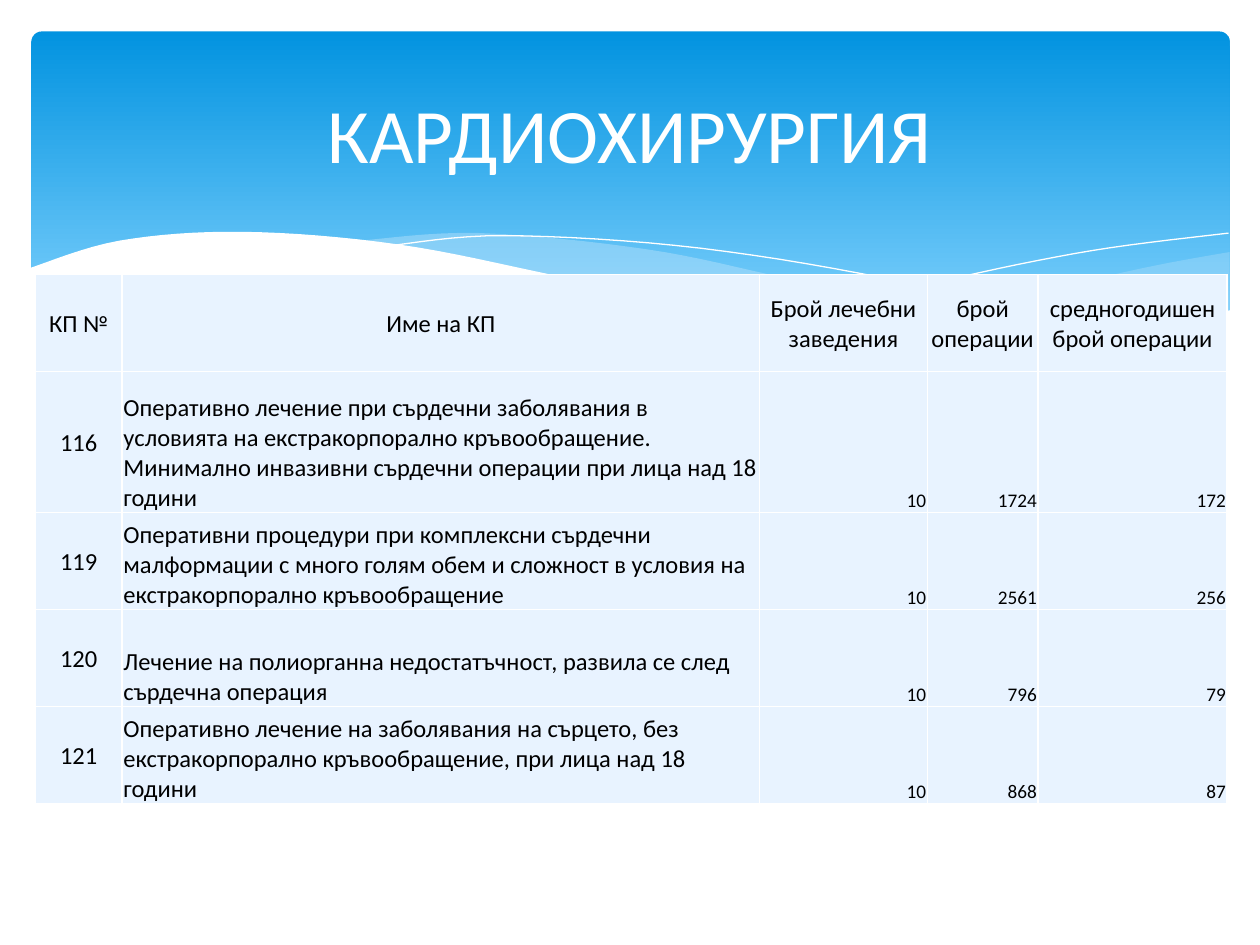
import pptx
import pptx.dml.color
import pptx.enum.shapes
import pptx.enum.text
import pptx.oxml
import pptx.oxml.ns
import pptx.util
from pptx.util import Inches

RGB = pptx.dml.color.RGBColor.from_string
THEME = {
    "font": "Calibri", "title_size": 44, "text_size": 14, "number_size": 11,
    "white": RGB("FFFFFF"), "text": RGB("000000"), "cell": RGB("E8F3FF"),
    "sky_top": RGB("0293E0"), "sky_bottom": RGB("83D3FE"), "wave": RGB("C6E7FC"),
}
ALIGN = pptx.enum.text.PP_ALIGN
ANCHOR = pptx.enum.text.MSO_ANCHOR


def smooth_curve(knots, steps=8):
    """Return Catmull-Rom points in EMU through knots given in inches."""
    ends = [knots[0], *knots, knots[-1]]
    curve = [knots[0]]
    for a, b, c, d in zip(ends, ends[1:], ends[2:], ends[3:]):
        for k in range(1, steps + 1):
            t = k / steps
            curve.append([q + (t * (r - p) + t**2 * (2*p - 5*q + 4*r - u)
                               + t**3 * (3*q - p - 3*r + u)) / 2
                          for p, q, r, u in zip(a, b, c, d)])
    return [(Inches(x), Inches(y)) for x, y in curve]


def add_text(tf, text, size, color, align):
    tf.word_wrap = True
    p = tf.paragraphs[0]
    p.alignment = align
    r = p.add_run()
    r.text = text
    r.font.name = THEME["font"]
    r.font.size = pptx.util.Pt(THEME[size])
    r.font.color.rgb = THEME[color]


prs = pptx.Presentation()
prs.slide_width, prs.slide_height = Inches(10), Inches(7.5)
s = prs.slides.add_slide(prs.slide_layouts[5])

# Sky banner
sky = s.shapes.add_shape(pptx.enum.shapes.MSO_SHAPE.ROUNDED_RECTANGLE,
                         Inches(0.25), Inches(0.25), Inches(9.51), Inches(2.7))
sky.adjustments[0] = 0.03
sky.shadow.inherit = False
sky.line.fill.background()
sky.fill.gradient()
sky.fill.gradient_angle = 270
for stop, color, position in zip(sky.fill.gradient_stops, ("sky_top", "sky_bottom"), (0, 0.9)):
    stop.color.rgb = THEME[color]
    stop.position = position

# Waves: fill opacity in percent (None is an open white line), then the edges in inches
waves = [
    (29, [[(9.76, 2), (9.06, 2.13), (7.79, 2.42), (6.61, 2.65)],
          [(6.61, 2.65), (7.45, 2.75), (8.35, 2.77), (9.13, 2.67), (9.76, 2.47)]]),
    (40, [[(2.86, 1.91), (4.49, 2.22), (6.01, 2.55), (7.22, 2.74), (8.18, 2.78), (8.93, 2.73)],
          [(8.93, 2.73), (7.75, 2.54), (6.29, 2.22), (5.14, 1.98), (3.8, 1.85), (2.86, 1.91)]]),
    (None, [[(3.09, 1.95), (4.01, 1.87), (5.56, 1.97), (7.27, 2.26), (9.07, 2.72)]]),
    (None, [[(6.13, 2.57), (7.48, 2.23), (8.66, 1.99), (9.75, 1.85)]]),
    (100, [[(9.77, 2.46), (8.87, 2.71), (7.78, 2.76), (6.26, 2.58), (4.47, 2.2),
            (3.16, 1.94), (1.93, 1.84), (0.95, 1.91), (0.23, 2.13)],
           [(0.23, 3.29), (9.77, 3.29)]]),
]
for opacity, edges in waves:
    start, *rest = [point for edge in edges for point in smooth_curve(edge)]
    builder = s.shapes.build_freeform(*start)
    builder.add_line_segments(rest, close=opacity is not None)
    sp = builder.convert_to_shape()
    sp.shadow.inherit = False
    if opacity is None:
        sp.fill.background()
        sp.line.color.rgb = THEME["white"]
        sp.line.width = pptx.util.Pt(0)
        continue
    sp.line.fill.background()
    sp.fill.solid()
    sp.fill.fore_color.rgb = THEME["white" if opacity == 100 else "wave"]
    if opacity < 100:
        color = sp.element.spPr.find(pptx.oxml.ns.qn("a:solidFill"))[0]
        color.append(pptx.oxml.parse_xml(
            f'<a:alpha {pptx.oxml.ns.nsdecls("a")} val="{opacity * 1000}"/>'))

# Title, brought in front of the banner
title = s.shapes.title
title.left, title.top, title.width, title.height = (Inches(v) for v in (0.5, 0.37, 9, 1.37))
title.element.getparent().append(title.element)
title.text_frame.auto_size = pptx.enum.text.MSO_AUTO_SIZE.NONE
title.text_frame.vertical_anchor = ANCHOR.MIDDLE
add_text(title.text_frame, "КАРДИОХИРУРГИЯ", "title_size", "white", ALIGN.CENTER)

# Table of clinical pathways
rows = [
    ("КП №", "Име на КП", "Брой лечебни заведения", "брой операции",
     "средногодишен брой операции"),
    ("116", "Оперативно лечение при сърдечни заболявания в условията на екстракорпорално "
     "кръвообращение. Минимално инвазивни сърдечни операции при лица над 18 години",
     "10", "1724", "172"),
    ("119", "Оперативни процедури при комплексни сърдечни малформации с много голям обем и "
     "сложност в условия на екстракорпорално кръвообращение", "10", "2561", "256"),
    ("120", "Лечение на полиорганна недостатъчност, развила се след сърдечна операция",
     "10", "796", "79"),
    ("121", "Оперативно лечение на заболявания на сърцето, без екстракорпорално "
     "кръвообращение, при лица над 18 години", "10", "868", "87"),
]
col_widths = [0.69, 5.06, 1.33, 0.88, 1.5]
row_heights = [0.77, 1.12, 0.77, 0.77, 0.77]
table = s.shapes.add_table(len(rows), len(col_widths), Inches(0.28), Inches(2.18),
                           Inches(sum(col_widths)), Inches(sum(row_heights))).table
for column, width in zip(table.columns, col_widths):
    column.width = Inches(width)
for i, (values, height) in enumerate(zip(rows, row_heights)):
    table.rows[i].height = Inches(height)
    for j, value in enumerate(values):
        cell = table.cell(i, j)
        cell.margin_left = cell.margin_right = cell.margin_top = Inches(0.01)
        cell.margin_bottom = 0
        if i == 0 or j == 0:
            size, align, anchor = "text_size", ALIGN.CENTER, ANCHOR.MIDDLE
        elif j == 1:
            size, align, anchor = "text_size", ALIGN.LEFT, ANCHOR.BOTTOM
        else:
            size, align, anchor = "number_size", ALIGN.RIGHT, ANCHOR.BOTTOM
        add_text(cell.text_frame, value, size, "text", align)
        cell.vertical_anchor = anchor
        tc_pr = cell._tc.get_or_add_tcPr()
        for side in ("lnL", "lnR", "lnT", "lnB"):
            tc_pr.append(pptx.oxml.parse_xml(
                f'<a:{side} {pptx.oxml.ns.nsdecls("a")} w="12700"><a:solidFill>'
                f'<a:srgbClr val="{THEME["white"]}"/></a:solidFill></a:{side}>'))
        cell.fill.solid()
        cell.fill.fore_color.rgb = THEME["cell"]

prs.save("out.pptx")
